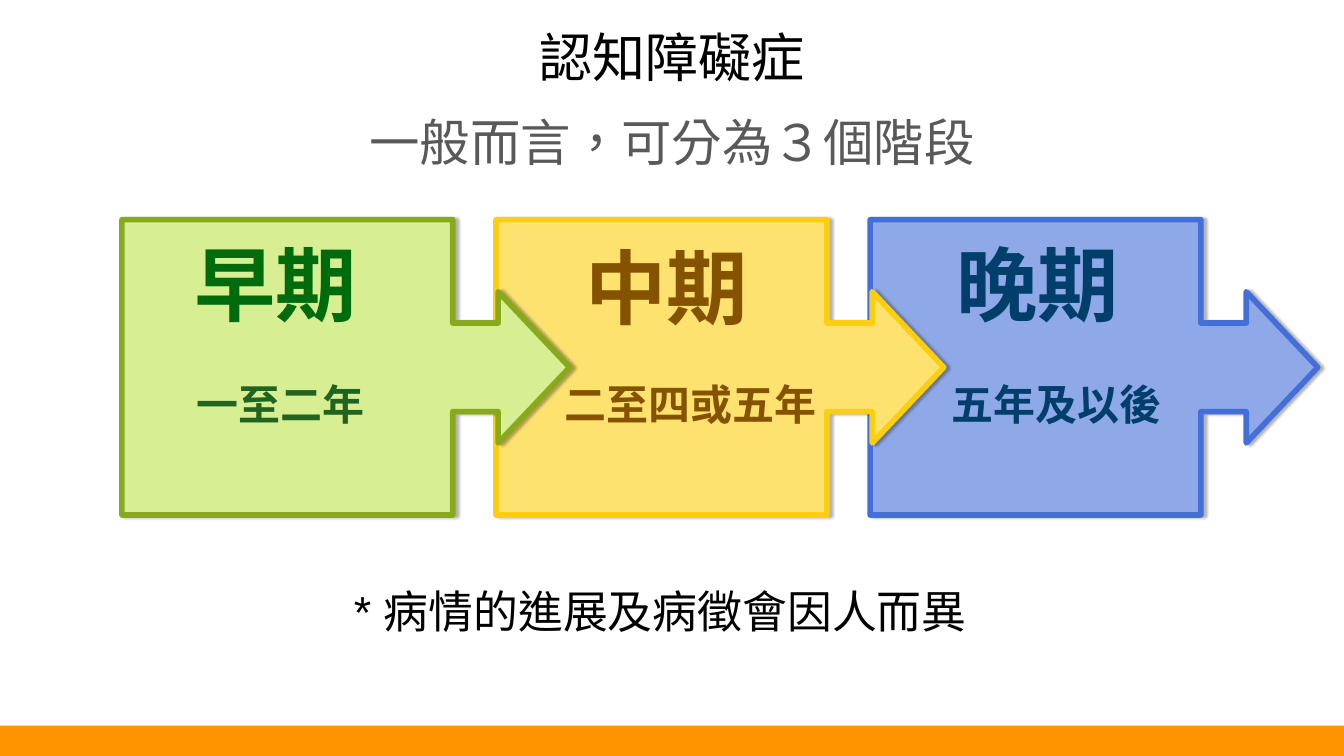
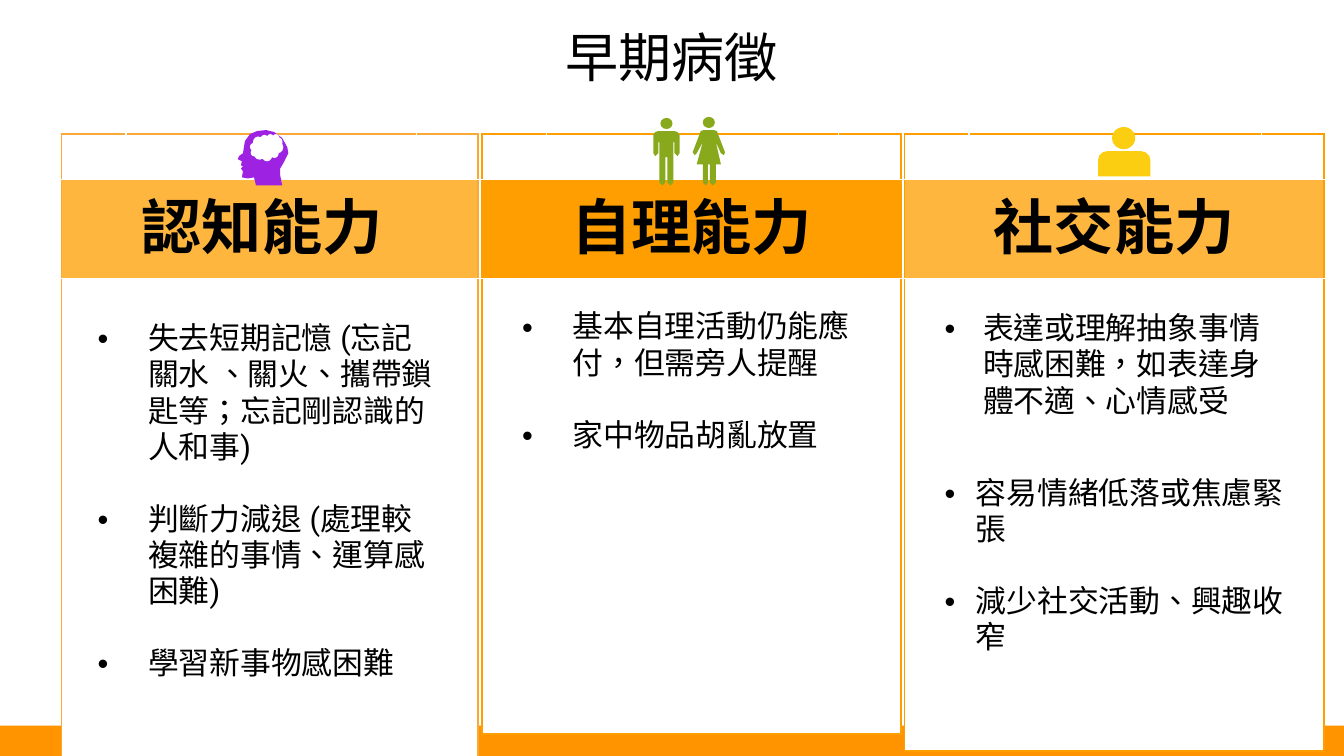
from lxml.etree import SubElement
from pptx import Presentation
from pptx.dml.color import RGBColor
from pptx.enum.lang import MSO_LANGUAGE_ID
from pptx.enum.shapes import MSO_SHAPE
from pptx.enum.text import MSO_ANCHOR, MSO_AUTO_SIZE, PP_ALIGN
from pptx.oxml.ns import qn
from pptx.util import Inches, Pt

COLORS = {
    "black": "000000", "white": "FFFFFF", "grey": "595959", "band": "FF9300",
    "amber": "FFB63F", "orange": "FE9E00", "amber_line": "FAA936",
    "green": "87A91B", "green_fill": "D8EE93", "green_text": "006B0C", "green_note": "216321",
    "yellow": "FBCE11", "yellow_fill": "FDE270", "brown": "855200",
    "blue": "446ED8", "blue_fill": "8FA8E8", "navy": "003E6B", "purple": "9D22E2",
}
FONT = "Roboto"
BULLET_GAP = 25.5

STAGES = [
    ("green", "早期", "green_text", 1.26, 2.28, "一至二年", "green_note", 1.9),
    ("yellow", "中期", "brown", 5.14, 2.31, "二至四或五年", "brown", 5.55),
    ("blue", "晚期", "navy", 8.82, 2.28, "五年及以後", "navy", 9.39),
]
STAGE_LEFT, STAGE_STEP = 1.21, 3.71

WIDE_COLS = [0.33, 0.31, 2.9, 0.29, 0.33]
CARDS = [
    dict(left=0.61, cols=[0.29, 0.35, 2.88, 0.32, 0.29], heading="認知能力 ",
         fill="amber", line="amber_line", bottom=0.39,
         rows=[(4.75, 0.5, ["失去短期記憶 (忘記關水 、關火、攜帶鎖匙等；忘記剛認識的人和事)",
                            "判斷力減退 (處理較複雜的事情、運算感困難)",
                            "學習新事物感困難"])]),
    dict(left=4.78, cols=WIDE_COLS, heading="自理能力",
         fill="orange", line="orange", bottom=0.07,
         rows=[(2.05, 0.5, ["基本自理活動仍能應付，但需旁人提醒", "家中物品胡亂放置"]),
               (0.73, 0, []), (0.6, 0, []), (1.14, 0, [])]),
    dict(left=8.97, cols=WIDE_COLS, heading="社交能力",
         fill="amber", line="orange", bottom=0.07,
         rows=[(1.73, 0.38, ["表達或理解抽象事情時感困難，如表達身體不適、心情感受"]),
               (2.25, 0.31, ["容易情緒低落或焦慮緊張", "減少社交活動、興趣收窄"]),
               (0.71, 0, [])]),
]

HEAD = [(264, 129), (272, 131), (280, 137), (285, 146), (286, 152), (281, 162), (278, 167),
        (278, 174), (280, 184), (254, 184), (252, 176), (246, 177), (240, 176), (241, 170),
        (239, 167), (241, 165), (239, 164), (240, 160), (236, 158), (237, 155), (241, 152),
        (242, 146), (243, 140), (248, 133), (255, 130)]
MAN = [(648, 134), (650, 131), (653, 130), (669, 130), (672, 131), (674, 134), (674, 152),
       (672, 155), (669, 152), (669, 141), (668, 141), (668, 181), (665, 184), (662, 181),
       (662, 156), (660, 156), (660, 181), (657, 184), (654, 181), (654, 141), (653, 141),
       (653, 152), (650, 155), (648, 152)]
WOMAN = [(695, 130), (698, 129), (708, 129), (711, 130), (719, 151), (718, 154), (715, 152),
         (710, 141), (715, 163), (710, 163), (710, 181), (707, 184), (704, 181), (704, 163),
         (702, 163), (702, 181), (700, 184), (697, 181), (697, 163), (691, 163), (697, 141),
         (691, 152), (689, 154), (687, 151)]


def rgb(name):
    return RGBColor.from_string(COLORS[name])


class Deck:
    def __init__(self):
        self.prs = Presentation()
        self.prs.slide_width, self.prs.slide_height = Inches(13.33), Inches(7.5)
        self.s = None

    def new_slide(self, layout, title):
        first = self.s is None
        self.s = self.prs.slides.add_slide(self.prs.slide_layouts[layout])
        if first:
            band = self.shape(MSO_SHAPE.RECTANGLE, 0, 7.2, 13.33, 0.3, "band")
            self.prs.slide_master.shapes.element.insert(2, band.element)
        self.heading(self.s.shapes.title, title, 0.18, 37.9, "black")

    def format(self, p, size, color, bold=False, font=FONT):
        for r in p.runs:
            r.font.size, r.font.bold = Pt(size), bold
            r.font.color.rgb = rgb(color)
            r.font.name = font
            r.font.language_id = MSO_LANGUAGE_ID.TRADITIONAL_CHINESE
            SubElement(r.font._element, qn("a:ea")).set("typeface", font)

    def insets(self, tf):
        tf.margin_left = tf.margin_right = tf.margin_top = tf.margin_bottom = Inches(0.05)
        tf.word_wrap = True

    def heading(self, sp, text, top, size, color):
        sp.left, sp.top, sp.width, sp.height = Inches(0), Inches(top), Inches(13.33), Inches(0.84)
        tf = sp.text_frame
        tf.text = text
        self.insets(tf)
        tf.auto_size, tf.vertical_anchor = MSO_AUTO_SIZE.NONE, MSO_ANCHOR.MIDDLE
        p = tf.paragraphs[0]
        pPr = p._p.get_or_add_pPr()
        pPr.set("marL", "0")
        pPr.set("indent", "0")
        SubElement(pPr, qn("a:buNone"))
        p.alignment, p.line_spacing, p.space_before = PP_ALIGN.CENTER, 0.9, Pt(0)
        self.format(p, size, color)

    def subtitle(self, text):
        self.heading(self.s.placeholders[1], text, 1.02, 36, "grey")

    def text(self, text, left, top, width, height, size, color, bold=True, align=PP_ALIGN.LEFT):
        tf = self.s.shapes.add_textbox(
            Inches(left), Inches(top), Inches(width), Inches(height)).text_frame
        self.insets(tf)
        p = tf.paragraphs[0]
        p.text, p.alignment = text, align
        self.format(p, size, color, bold)
        return p

    def paint(self, sp, fill):
        sp.shadow.inherit = False
        sp.fill.solid()
        sp.fill.fore_color.rgb = rgb(fill)
        sp.line.fill.background()
        return sp

    def shape(self, kind, left, top, width, height, fill):
        return self.paint(self.s.shapes.add_shape(
            kind, Inches(left), Inches(top), Inches(width), Inches(height)), fill)

    def outline(self, points, fill):
        builder = self.s.shapes.build_freeform(*points[0], scale=Inches(0.01))
        builder.add_line_segments(points[1:], close=True)
        return self.paint(builder.convert_to_shape(), fill)

    def stage_arrow(self, left, color):
        sp = self.shape(MSO_SHAPE.RIGHT_ARROW_CALLOUT, left, 2.18, 4.44, 2.93, color + "_fill")
        for i, value in enumerate((0.3, 0.256, 0.242, 0.739)):
            sp.adjustments[i] = value
        sp.line.color.rgb, sp.line.width = rgb(color), Pt(4)
        effects = sp.element.spPr.find(qn("a:effectLst"))
        shadow = SubElement(effects, qn("a:outerShdw"), blurRad=str(Pt(2)), dist=str(Pt(2)),
                            dir="0", rotWithShape="0")
        tint = SubElement(shadow, qn("a:srgbClr"), val=COLORS["black"])
        SubElement(tint, qn("a:alpha"), val="30000")

    def border(self, cell, sides, color):
        tcPr = cell._tc.get_or_add_tcPr()
        for side in sides:
            ln = SubElement(tcPr, qn("a:ln" + side), w=str(Pt(1.5)))
            SubElement(SubElement(ln, qn("a:solidFill")), qn("a:srgbClr"), val=COLORS[color])

    def cell_insets(self, cell, bottom=0.07):
        cell.margin_left = cell.margin_right = cell.margin_top = Inches(0.07)
        cell.margin_bottom = Inches(bottom)
        cell.vertical_anchor = MSO_ANCHOR.MIDDLE

    def bullets(self, cell, items, indent, bottom):
        self.cell_insets(cell, bottom)
        tf = cell.text_frame
        for i, item in enumerate(items):
            p = tf.add_paragraph() if i else tf.paragraphs[0]
            p.text = item
            pPr = p._p.get_or_add_pPr()
            pPr.set("marL", str(Inches(indent)))
            pPr.set("indent", str(-Inches(indent)))
            SubElement(pPr, qn("a:buFont"), typeface="Arial")
            SubElement(pPr, qn("a:buChar"), char="•")
            if i:
                p.space_before = Pt(BULLET_GAP)
            self.format(p, 22, "black")

    def card(self, left, cols, heading, fill, line, bottom, rows):
        heights = [0.45, 0.98] + [row[0] for row in rows]
        last, end = len(heights) - 1, len(cols) - 1
        tbl = self.s.shapes.add_table(
            len(heights), len(cols), Inches(left), Inches(1.33),
            Inches(sum(cols)), Inches(sum(heights))).table
        tbl.first_row = tbl.horz_banding = False
        for col, width in zip(tbl.columns, cols):
            col.width = Inches(width)
        for row, height in zip(tbl.rows, heights):
            row.height = Inches(height)

        merges = [(0, 0, 0, 1), (0, 3, 0, end), (1, 0, 1, end)]
        merges += [(r, 1, r, 3) for r in range(2, last + 1)]
        if last > 2:
            merges += [(2, c, last, c) for c in (0, end)]
        for r1, c1, r2, c2 in merges:
            tbl.cell(r1, c1).merge(tbl.cell(r2, c2))

        for r in range(last + 1):
            for c in range(end + 1):
                cell = tbl.cell(r, c)
                if cell.is_spanned:
                    continue
                edges = {"L": c == 0, "R": c + cell.span_width > end,
                         "T": r == 0, "B": r + cell.span_height > last}
                self.border(cell, [side for side, outer in edges.items() if outer], line)
                cell.fill.solid()
                cell.fill.fore_color.rgb = rgb(fill if r == 1 else "white")

        cell = tbl.cell(1, 0)
        self.cell_insets(cell)
        p = cell.text_frame.paragraphs[0]
        p.text, p.alignment = heading, PP_ALIGN.CENTER
        self.format(p, 43, "black", True)
        for r, (_, indent, items) in enumerate(rows, 2):
            if items:
                self.bullets(tbl.cell(r, 1), items, indent, bottom)


def stages_slide(deck):
    deck.new_slide(1, "認知障礙症")
    deck.subtitle("一般而言，可分為３個階段")
    for i in reversed(range(len(STAGES))):
        deck.stage_arrow(STAGE_LEFT + i * STAGE_STEP, STAGES[i][0])
    for _, name, name_color, name_left, name_top, period, period_color, period_left in STAGES:
        deck.text(name, name_left, name_top, 2.94, 1.23, 58, name_color, align=PP_ALIGN.CENTER)
        deck.text(period, period_left, 3.71, 3.94, 0.61, 30, period_color)
    p = deck.text("* ", 3.46, 5.74, 8.42, 0.73, 32, "black", False)
    deck.format(p, 32, "black", font="Arial")
    p.add_run().text = "病情的進展及病徵會因人而異"
    r = p.runs[1]
    r.font.size, r.font.name = Pt(32), FONT
    r.font.color.rgb = rgb("black")
    r.font.language_id = MSO_LANGUAGE_ID.TRADITIONAL_CHINESE
    SubElement(r.font._element, qn("a:ea")).set("typeface", FONT)


def symptoms_slide(deck):
    deck.new_slide(5, "早期病徵")
    for card in CARDS:
        deck.card(**card)
    deck.outline(HEAD, "purple")
    deck.shape(MSO_SHAPE.CLOUD, 2.48, 1.33, 0.33, 0.27, "white")
    for body, head_left, head_top in ((MAN, 6.55, 1.17), (WOMAN, 6.97, 1.16)):
        deck.outline(body, "green")
        deck.shape(MSO_SHAPE.OVAL, head_left, head_top, 0.12, 0.11, "green")
    torso = deck.shape(MSO_SHAPE.ROUND_2_SAME_RECTANGLE, 10.89, 1.5, 0.52, 0.25, "yellow")
    torso.adjustments[0] = 0.36
    deck.shape(MSO_SHAPE.OVAL, 11.03, 1.26, 0.23, 0.22, "yellow")


def main():
    deck = Deck()
    stages_slide(deck)
    symptoms_slide(deck)
    deck.prs.save("out.pptx")


if __name__ == "__main__":
    main()
